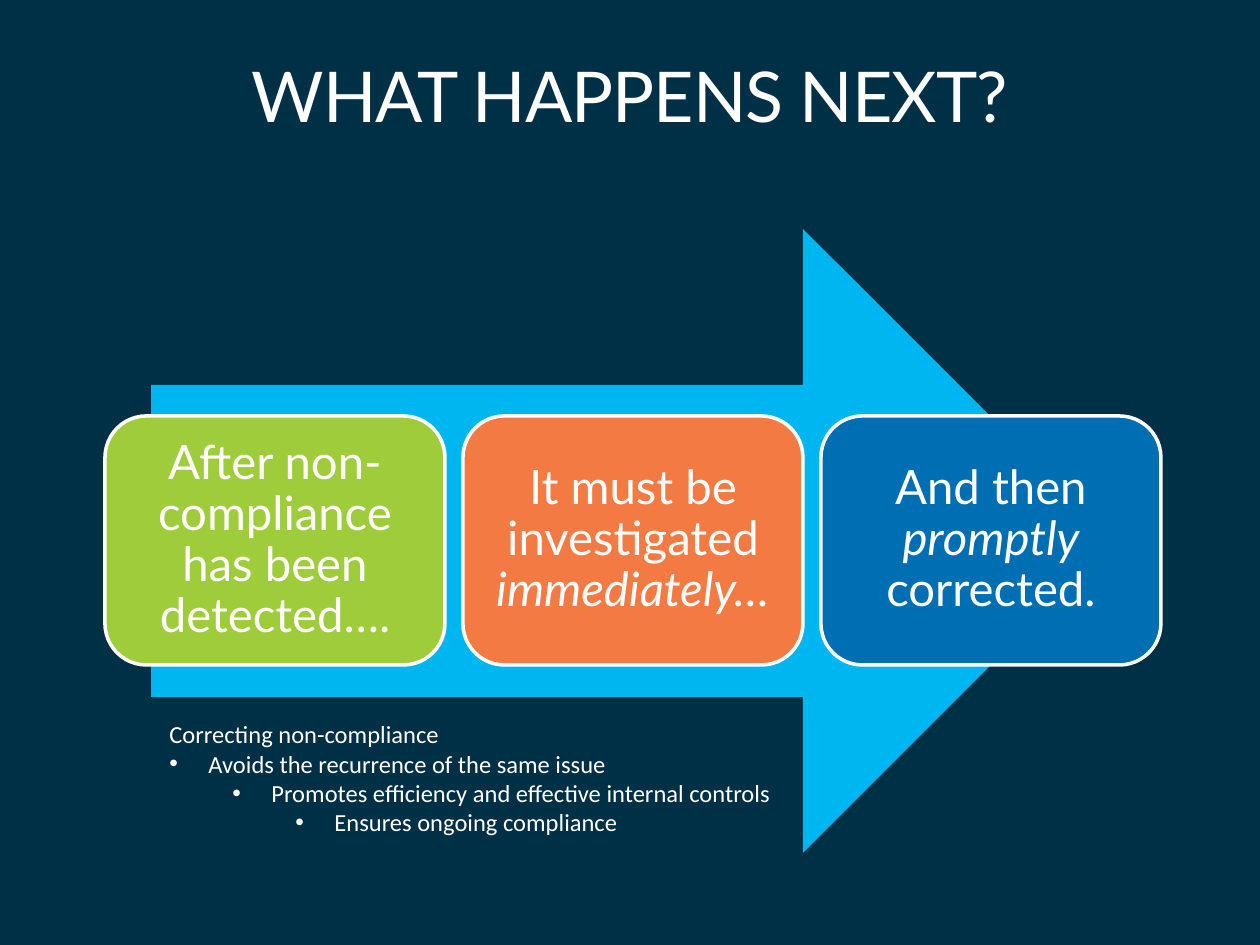
from lxml.etree import SubElement
from pptx import Presentation
from pptx.dml.color import RGBColor
from pptx.enum.shapes import MSO_SHAPE
from pptx.enum.text import MSO_ANCHOR, MSO_AUTO_SIZE, PP_ALIGN
from pptx.oxml.ns import qn
from pptx.util import Emu, Pt

NAVY = RGBColor(0x00, 0x30, 0x46)
SKY = RGBColor(0x00, 0xB6, 0xF1)
GREEN = RGBColor(0x9F, 0xCC, 0x3B)
ORANGE = RGBColor(0xF4, 0x7A, 0x44)
BLUE = RGBColor(0x00, 0x6E, 0xB3)
WHITE = RGBColor(0xFF, 0xFF, 0xFF)

STEPS = [
    (GREEN, [("After non-compliance has been detected….", False)]),
    (ORANGE, [("It must be investigated ", False), ("immediately…", True)]),
    (BLUE, [("And then ", False), ("promptly", True), (" corrected.", False)]),
]
BENEFITS = [
    "Avoids the recurrence of the same issue",
    "Promotes efficiency and effective internal controls",
    "Ensures ongoing compliance",
]


def px(n):
    return Emu(round(n * 914400 / 126))


def apply(obj, values):
    for name, value in values.items():
        setattr(obj, name, value)


class Deck:
    """Holds the slide style and draws each kind of element."""

    title_font = dict(name="Lato", size=Pt(40), bold=False)
    card_font = dict(name="Lato", size=Pt(27))
    list_font = dict(name="Calibri", size=Pt(14))
    card_frame = dict(word_wrap=True, vertical_anchor=MSO_ANCHOR.MIDDLE,
                      margin_left=px(14), margin_right=px(14),
                      margin_top=px(14), margin_bottom=px(14))

    def __init__(self):
        self.prs = Presentation()
        apply(self.prs, dict(slide_width=px(1260), slide_height=px(945)))
        self.s = self.prs.slides.add_slide(self.prs.slide_layouts[5])
        fill = self.s.background.fill
        fill.solid()
        fill.fore_color.rgb = NAVY

    def run(self, p, text, font, italic=False):
        r = p.add_run()
        r.text = text
        apply(r.font, dict(font, italic=italic))
        r.font.color.rgb = WHITE
        return r

    def title(self, text, x, y, w, h):
        sp = self.s.shapes.title
        apply(sp, dict(left=px(x), top=px(y), width=px(w), height=px(h)))
        tf = sp.text_frame
        apply(tf, dict(vertical_anchor=MSO_ANCHOR.MIDDLE, word_wrap=True,
                       auto_size=MSO_AUTO_SIZE.NONE))
        p = tf.paragraphs[0]
        p.alignment = PP_ALIGN.CENTER
        r = self.run(p, text, self.title_font)
        r.font._element.set("spc", "-50")

    def shape(self, kind, x, y, w, h, color):
        sp = self.s.shapes.add_shape(kind, px(x), px(y), px(w), px(h))
        sp.shadow.inherit = False
        sp.fill.solid()
        sp.fill.fore_color.rgb = color
        sp.line.fill.background()
        return sp

    def card(self, runs, x, y, w, h, color):
        sp = self.shape(MSO_SHAPE.ROUNDED_RECTANGLE, x, y, w, h, color)
        sp.line.color.rgb = WHITE
        sp.line.width = Pt(2)
        tf = sp.text_frame
        apply(tf, self.card_frame)
        p = tf.paragraphs[0]
        apply(p, dict(alignment=PP_ALIGN.CENTER, line_spacing=0.9))
        for text, italic in runs:
            self.run(p, text, self.card_font, italic)

    def stepped_list(self, heading, items, x, y, w, h):
        tf = self.s.shapes.add_textbox(px(x), px(y), px(w), px(h)).text_frame
        apply(tf, dict(word_wrap=True, auto_size=MSO_AUTO_SIZE.SHAPE_TO_FIT_TEXT))
        self.run(tf.paragraphs[0], heading, self.list_font)
        for level, text in enumerate(items):
            p = tf.add_paragraph()
            p.level = level
            pPr = p._p.get_or_add_pPr()
            pPr.set("marL", str(px(39 + 63 * level)))
            pPr.set("indent", str(-px(39)))
            SubElement(pPr, qn("a:buFont"), typeface="Arial")
            SubElement(pPr, qn("a:buChar"), char="•")
            self.run(p, text, self.list_font)


def main():
    deck = Deck()
    deck.title("WHAT HAPPENS NEXT?", 0, 0, 1260, 189)
    deck.shape(MSO_SHAPE.RIGHT_ARROW, 151, 229, 964, 624, SKY)
    for i, (color, runs) in enumerate(STEPS):
        deck.card(runs, 105 + 358 * i, 416, 340, 249, color)
    deck.stepped_list("Correcting non-compliance", BENEFITS, 157, 713, 713, 131)
    deck.prs.save("out.pptx")


if __name__ == "__main__":
    main()
